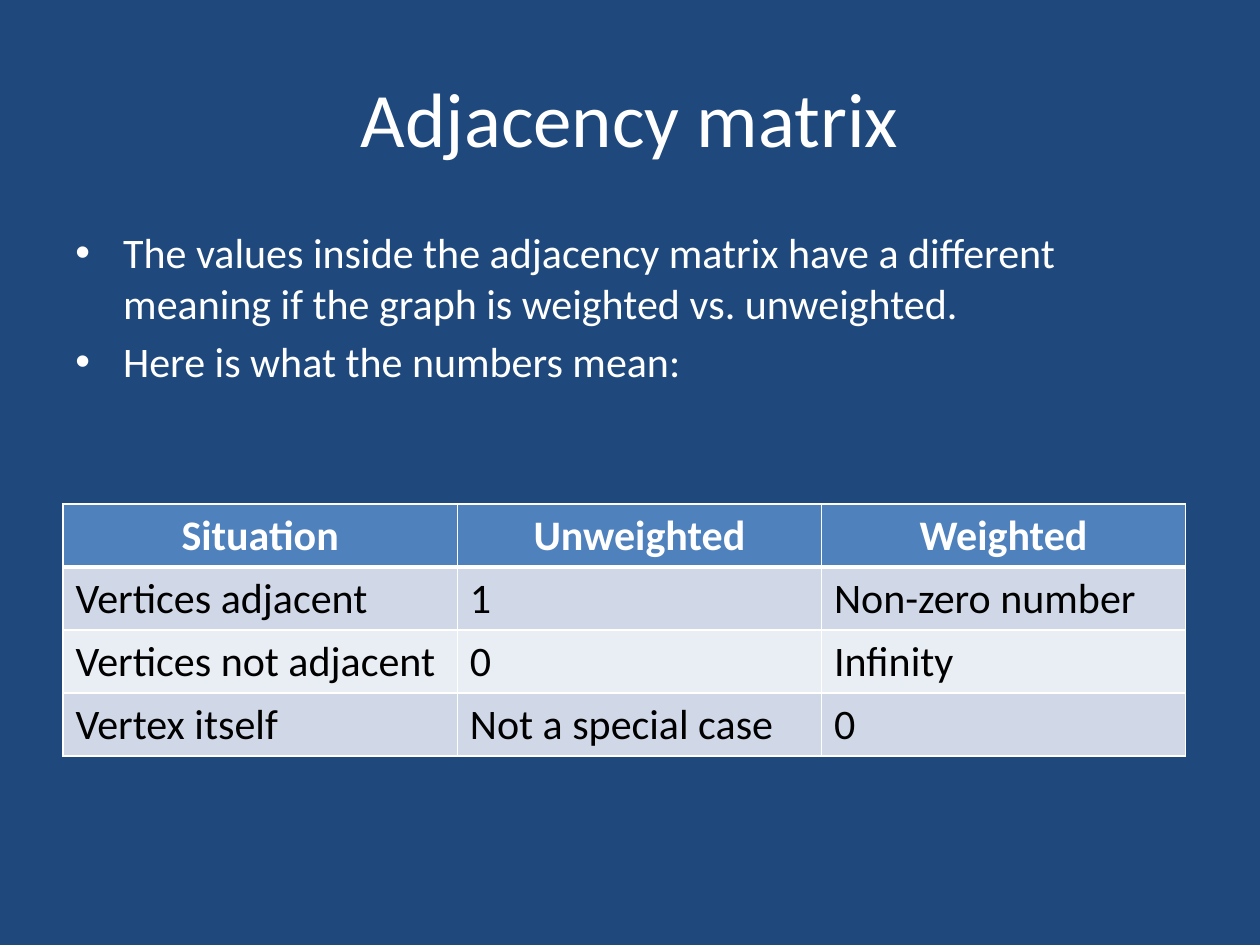
from dataclasses import dataclass

from lxml.etree import SubElement
from pptx import Presentation
from pptx.dml.color import RGBColor as RGB
from pptx.enum.text import MSO_ANCHOR as Anchor, PP_ALIGN as Align
from pptx.oxml.ns import qn
from pptx.util import Inches, Pt


@dataclass(frozen=True)
class Theme:
    font: str = "Calibri"
    back: str = "1F497D"
    light: str = "FFFFFF"
    dark: str = "000000"
    head: str = "4F81BD"
    bands: tuple = ("D0D8E8", "E9EDF4")
    title: int = 44
    body: int = 24
    thin: int = 1
    thick: int = 3


THEME = Theme()

POINTS = (
    "The values inside the adjacency matrix have a different meaning "
    "if the graph is weighted vs. unweighted.",
    "Here is what the numbers mean:",
)
ROWS = (
    ("Situation", "Unweighted", "Weighted"),
    ("Vertices adjacent", "1", "Non-zero number"),
    ("Vertices not adjacent", "0", "Infinity"),
    ("Vertex itself", "Not a special case", "0"),
)
WIDTHS = (3.13, 2.89, 2.89)


def style(para, size, color, bold=False, align=Align.LEFT):
    para.alignment = align
    for run in para.runs:
        font = run.font
        font.name = THEME.font
        font.size = Pt(size)
        font.bold = bold
        font.color.rgb = RGB.from_string(color)


def add_title(slide, text):
    title = slide.shapes.title
    title.left, title.top = Inches(0.5), Inches(0.3)
    title.width, title.height = Inches(9), Inches(1.25)
    frame = title.text_frame
    frame.text = text
    frame.vertical_anchor = Anchor.MIDDLE
    style(frame.paragraphs[0], THEME.title, THEME.light, align=Align.CENTER)


def add_bullet(para):
    props = para._p.get_or_add_pPr()
    indent = Inches(0.38)
    props.set("marL", str(indent))
    props.set("indent", str(-indent))
    SubElement(props, qn("a:buFont"), typeface="Arial")
    SubElement(props, qn("a:buChar"), char="•")


def add_points(slide, points):
    box = slide.shapes.add_textbox(Inches(0.5), Inches(1.75), Inches(9), Inches(4.95))
    frame = box.text_frame
    frame.word_wrap = True
    frame.text = "\n".join(points)
    for para in frame.paragraphs:
        style(para, THEME.body, THEME.light)
        para.space_before = Pt(0.2 * THEME.body)
        add_bullet(para)


def add_border(cell, side, width):
    line = SubElement(cell._tc.get_or_add_tcPr(), qn(f"a:ln{side}"), w=str(Pt(width)))
    fill = SubElement(line, qn("a:solidFill"))
    SubElement(fill, qn("a:srgbClr"), val=THEME.light)


def style_cell(cell, row):
    head = row == 0
    # The thick rule is shared by the header and the row below it.
    thick = {0: "B", 1: "T"}.get(row)
    for side in "LRTB":
        add_border(cell, side, THEME.thick if side == thick else THEME.thin)
    cell.fill.solid()
    color = THEME.head if head else THEME.bands[(row - 1) % 2]
    cell.fill.fore_color.rgb = RGB.from_string(color)
    style(
        cell.text_frame.paragraphs[0],
        THEME.body,
        THEME.light if head else THEME.dark,
        bold=head,
        align=Align.CENTER if head else Align.LEFT,
    )


def add_grid(slide, rows, widths):
    table = slide.shapes.add_table(
        len(rows), len(widths), Inches(0.5), Inches(4), Inches(sum(widths)), Inches(2)
    ).table
    for col, width in zip(table.columns, widths):
        col.width = Inches(width)
    for r, row in enumerate(rows):
        for c, text in enumerate(row):
            cell = table.cell(r, c)
            cell.text = text
            style_cell(cell, r)


def main():
    deck = Presentation()
    deck.slide_width, deck.slide_height = Inches(10), Inches(7.5)
    slide = deck.slides.add_slide(deck.slide_layouts[5])
    back = slide.background.fill
    back.solid()
    back.fore_color.rgb = RGB.from_string(THEME.back)
    add_title(slide, "Adjacency matrix")
    add_points(slide, POINTS)
    add_grid(slide, ROWS, WIDTHS)
    deck.save("out.pptx")


if __name__ == "__main__":
    main()
